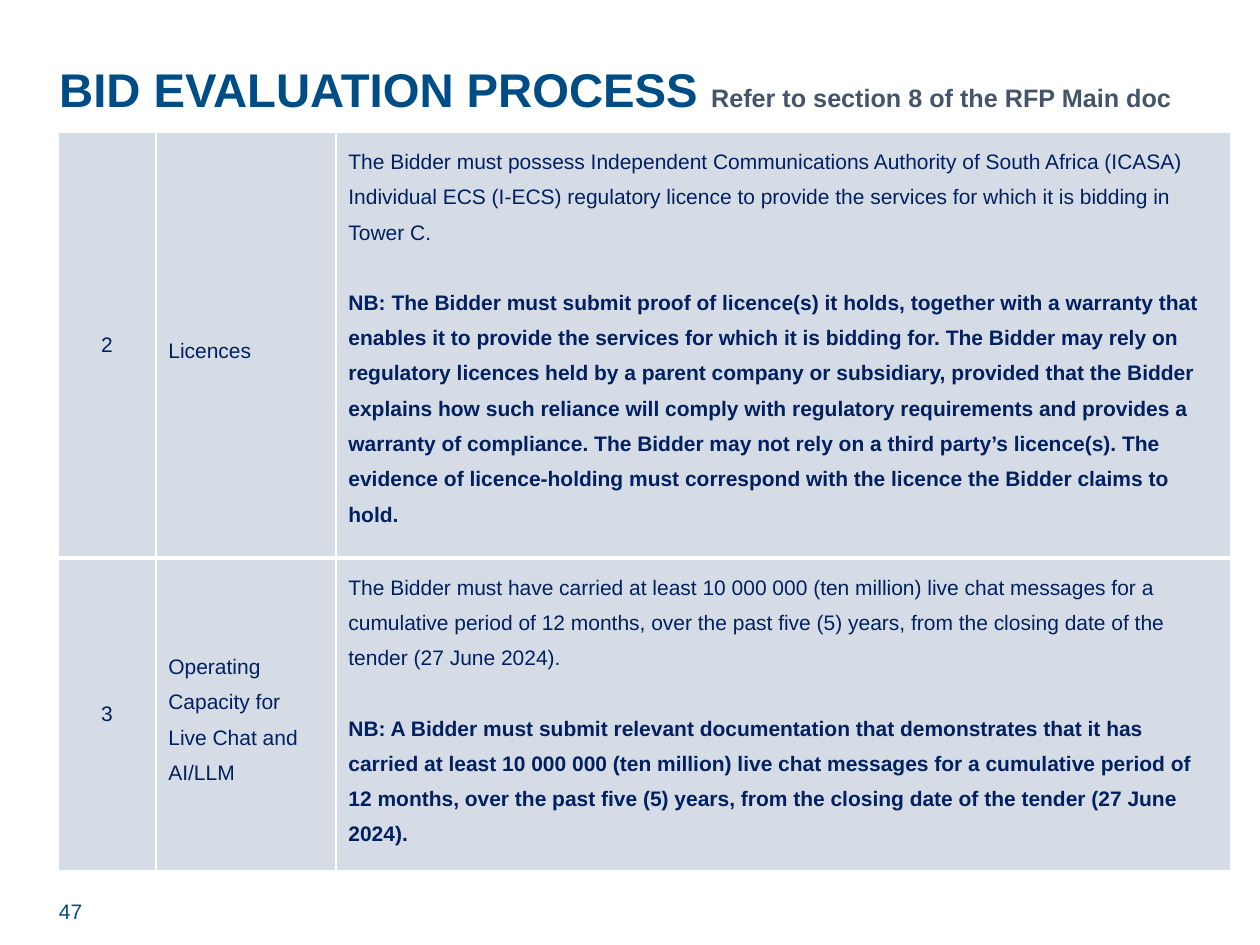
import pptx
import pptx.util
import pptx.dml.color
import pptx.enum.shapes
import pptx.enum.text
import pptx.oxml.ns
import lxml.etree

Cm, Pt = pptx.util.Cm, pptx.util.Pt
ALIGN = pptx.enum.text.PP_ALIGN
ANCHOR = pptx.enum.text.MSO_ANCHOR

COLOURS = {"blue": "004C85", "slate": "44546A", "navy": "002060",
           "cell": "D6DCE5", "white": "FFFFFF"}
FONT = "Arial"

TITLE = "BID EVALUATION PROCESS "
REFERENCE = "Refer to section 8 of the RFP Main doc"
PAGE_NUMBER = "47"
# Number, criterion, requirement, note
CRITERIA = [
    ("2", "Licences",
     "The Bidder must possess Independent Communications Authority of South Africa (ICASA) "
     "Individual ECS (I-ECS) regulatory licence to provide the services for which it is "
     "bidding in Tower C.",
     "NB: The Bidder must submit proof of licence(s) it holds, together with a warranty that "
     "enables it to provide the services for which it is bidding for. The Bidder may rely on "
     "regulatory licences held by a parent company or subsidiary, provided that the Bidder "
     "explains how such reliance will comply with regulatory requirements and provides a "
     "warranty of compliance. The Bidder may not rely on a third party’s licence(s). The "
     "evidence of licence-holding must correspond with the licence the Bidder claims to hold."),
    ("3", "Operating Capacity for Live Chat and AI/LLM",
     "The Bidder must have carried at least 10 000 000 (ten million) live chat messages for a "
     "cumulative period of 12 months, over the past five (5) years, from the closing date of "
     "the tender (27 June 2024).",
     "NB: A Bidder must submit relevant documentation that demonstrates that it has carried at "
     "least 10 000 000 (ten million) live chat messages for a cumulative period of 12 months, "
     "over the past five (5) years, from the closing date of the tender (27 June 2024)."),
]
COLUMN_WIDTHS = [1.97, 3.63, 18.04]
ROW_HEIGHTS = [8.2, 6.02]


def colour(name):
    return pptx.dml.color.RGBColor.from_string(COLOURS[name])


def write(para, text, size=12, shade="navy", bold=False, align=ALIGN.LEFT,
          spacing=None, before=None):
    """Add a formatted span to a paragraph."""
    para.alignment = align
    if spacing:
        para.line_spacing = spacing
    if before:
        para.space_before = Pt(before)
    span = para.add_run()
    span.text = text
    span.font.name, span.font.size, span.font.bold = FONT, Pt(size), bold
    span.font.color.rgb = colour(shade)


def format_cell(cell, borders):
    """Draw the white borders, then fill the cell."""
    properties = cell._tc.get_or_add_tcPr()
    for side, width in borders.items():
        line = lxml.etree.SubElement(properties, pptx.oxml.ns.qn(f"a:ln{side}"), w=str(Pt(width)))
        fill = lxml.etree.SubElement(line, pptx.oxml.ns.qn("a:solidFill"))
        lxml.etree.SubElement(fill, pptx.oxml.ns.qn("a:srgbClr"), val=COLOURS["white"])
    cell.fill.solid()
    cell.fill.fore_color.rgb = colour("cell")


deck = pptx.Presentation()
deck.slide_width, deck.slide_height = Cm(25.4), Cm(19.05)
page = deck.slides.add_slide(deck.slide_layouts[5])

# Footer rule
rule = page.shapes.add_connector(pptx.enum.shapes.MSO_CONNECTOR.STRAIGHT,
                                 Cm(1.19), Cm(17.32), Cm(24.21), Cm(17.32))
rule.line.color.rgb = colour("blue")
rule.line.width = Pt(2)
lxml.etree.SubElement(rule._element.spPr, pptx.oxml.ns.qn("a:effectLst"))

# Title
title = page.shapes.title
title.left, title.top, title.width, title.height = Cm(0.94), Cm(1.22), Cm(23.65), Cm(1.47)
title.text_frame.auto_size = pptx.enum.text.MSO_AUTO_SIZE.NONE
title.text_frame.vertical_anchor = ANCHOR.TOP
heading = title.text_frame.paragraphs[0]
write(heading, TITLE, size=27, shade="blue", bold=True, spacing=0.9)
write(heading, REFERENCE, size=14.4, shade="slate", bold=True, spacing=0.9)

# Page number
number_box = page.shapes.add_textbox(Cm(0.94), Cm(17.86), Cm(1.17), Cm(1.02))
number_box.text_frame.word_wrap = True
number_box.text_frame.vertical_anchor = ANCHOR.MIDDLE
write(number_box.text_frame.paragraphs[0], PAGE_NUMBER, shade="blue")

# Criteria table
table = page.shapes.add_table(len(CRITERIA), len(COLUMN_WIDTHS), Cm(1.17), Cm(2.67),
                              Cm(sum(COLUMN_WIDTHS)), Cm(sum(ROW_HEIGHTS))).table
table.first_row = table.horz_banding = False
for column, width in zip(table.columns, COLUMN_WIDTHS):
    column.width = Cm(width)
for index, (number, criterion, requirement, note) in enumerate(CRITERIA):
    row = table.rows[index]
    row.height = Cm(ROW_HEIGHTS[index])
    # A thick line parts the two rows
    borders = {"L": 1, "R": 1, "T": 3 if index else 1, "B": 1 if index else 3}
    for cell in row.cells:
        format_cell(cell, borders)
        cell.vertical_anchor = ANCHOR.MIDDLE
    number_cell, criterion_cell, detail_cell = row.cells
    detail_cell.vertical_anchor = ANCHOR.TOP
    write(number_cell.text_frame.paragraphs[0], number, align=ALIGN.CENTER)
    write(criterion_cell.text_frame.paragraphs[0], criterion, spacing=1.5)
    details = detail_cell.text_frame
    write(details.paragraphs[0], requirement, spacing=1.5)
    write(details.add_paragraph(), note, bold=True, spacing=1.5, before=20)

deck.save("out.pptx")
